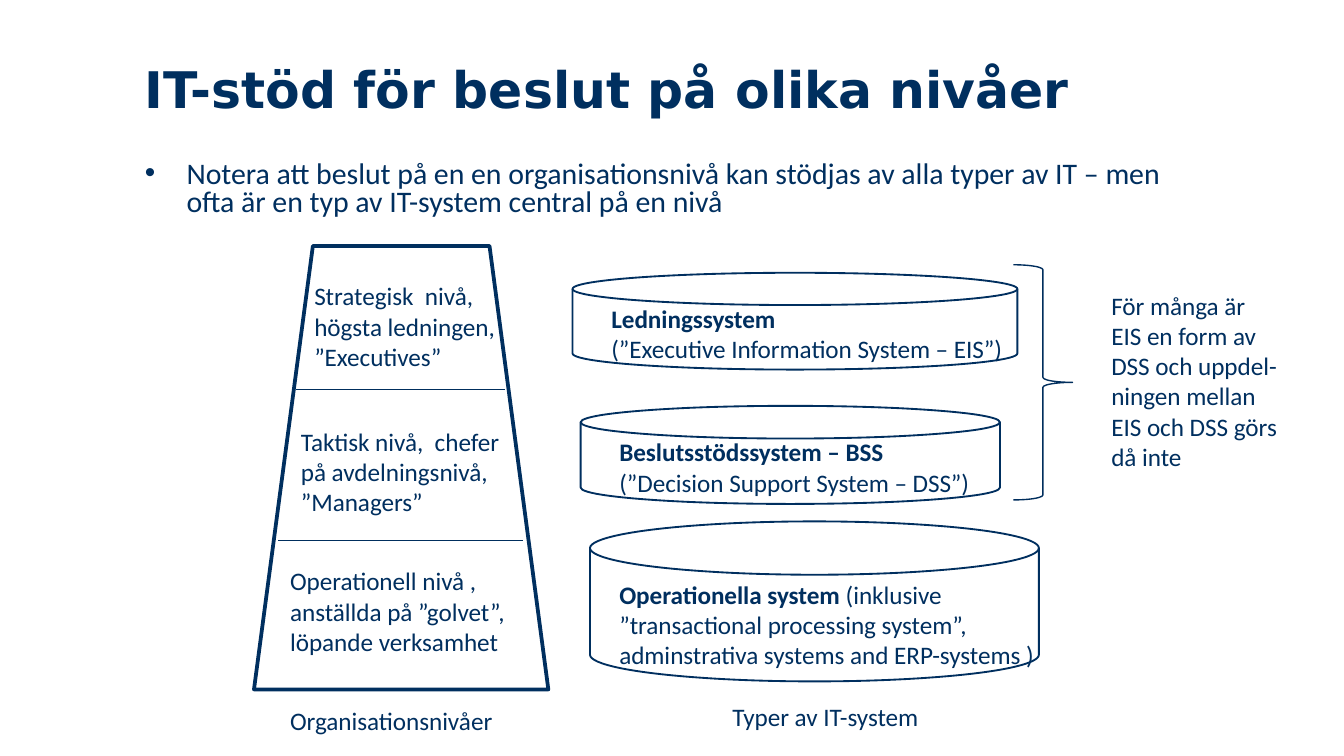
from dataclasses import dataclass, field
from typing import NamedTuple

import pptx
import pptx.dml.color
import pptx.enum.shapes
import pptx.enum.text
import pptx.oxml
import pptx.oxml.ns
import pptx.util

MSO = pptx.enum.shapes.MSO_SHAPE
Pt = pptx.util.Pt
COLS = 100


@dataclass(frozen=True)
class Theme:
    ink: str = "002F5F"
    rule: str = "002E5D"
    paper: str = "FFFFFF"
    font: str = "Calibri"
    title_font: str = "DejaVu Sans"
    title: float = 27
    body: float = 16
    label: float = 13.5
    thin: float = 0.75
    medium: float = 1
    thick: float = 2


THEME = Theme()


class Box(NamedTuple):
    col: float
    row: float
    cols: float
    rows: float


class Run(NamedTuple):
    text: str
    bold: bool = False


@dataclass(frozen=True)
class Label:
    box: Box
    paragraphs: list[list[Run]]
    size: float = THEME.label
    font: str = THEME.font
    bullet: bool = False


@dataclass(frozen=True)
class Outline:
    kind: int
    box: Box
    width: float = THEME.medium
    format: dict = field(default_factory=dict)
    filled: bool = True
    color: str = THEME.ink


class Rule(NamedTuple):
    start: float
    end: float
    row: float


def rgb(value: str) -> pptx.dml.color.RGBColor:
    return pptx.dml.color.RGBColor.from_string(value)


def apply(target, values: dict) -> None:
    for name, value in values.items():
        setattr(target, name, value)


def add_bullet(p) -> None:
    pPr = p._p.get_or_add_pPr()
    indent = pptx.util.Inches(0.31)
    pPr.set("marL", str(indent))
    pPr.set("indent", str(-indent))
    for tag in ('buFont typeface="Arial"', 'buChar char="•"'):
        pPr.append(pptx.oxml.parse_xml(f'<a:{tag} {pptx.oxml.ns.nsdecls("a")}/>'))
    p.line_spacing = 0.8


def draw_label(s, cell: float, label: Label) -> None:
    sp = s.shapes.add_textbox(*(round(v * cell) for v in label.box))
    tf = sp.text_frame
    apply(tf, {"word_wrap": True,
               "auto_size": pptx.enum.text.MSO_AUTO_SIZE.SHAPE_TO_FIT_TEXT})
    for i, runs in enumerate(label.paragraphs):
        p = tf.add_paragraph() if i else tf.paragraphs[0]
        if label.bullet:
            add_bullet(p)
        for run in runs:
            r = p.add_run()
            r.text = run.text
            apply(r.font, {"name": label.font, "size": Pt(label.size), "bold": run.bold})
            r.font.color.rgb = rgb(THEME.ink)


def draw_outline(s, cell: float, outline: Outline) -> None:
    sp = s.shapes.add_shape(outline.kind, *(round(v * cell) for v in outline.box))
    apply(sp, outline.format)
    sp.shadow.inherit = False
    if outline.filled:
        sp.fill.solid()
        sp.fill.fore_color.rgb = rgb(THEME.paper)
    else:
        sp.fill.background()
    sp.line.color.rgb = rgb(outline.color)
    sp.line.width = Pt(outline.width)


def draw_rule(s, cell: float, rule: Rule) -> None:
    ends = (rule.start, rule.row, rule.end, rule.row)
    sp = s.shapes.add_connector(pptx.enum.shapes.MSO_CONNECTOR.STRAIGHT,
                                *(round(v * cell) for v in ends))
    sp.line.color.rgb = rgb(THEME.rule)
    sp.line.width = Pt(THEME.thin)
    sp._element.spPr.append(
        pptx.oxml.parse_xml(f'<a:effectLst {pptx.oxml.ns.nsdecls("a")}/>'))


OUTLINES = [
    Outline(MSO.FLOWCHART_MANUAL_OPERATION, Box(18.9, 18.3, 21.9, 33),
            THEME.thick, {"rotation": 180}),
    Outline(MSO.FLOWCHART_MAGNETIC_DISK, Box(42.6, 20.3, 33.1, 7.2)),
    Outline(MSO.FLOWCHART_MAGNETIC_DISK, Box(43.2, 30.2, 31.2, 7.3)),
    Outline(MSO.FLOWCHART_MAGNETIC_DISK, Box(43.9, 38.8, 33.4, 11.9)),
    Outline(MSO.RIGHT_BRACE, Box(75.4, 19.7, 4.4, 17.5), THEME.thin,
            filled=False, color=THEME.rule),
]

RULES = [Rule(22, 37.6, 29), Rule(20.7, 38.9, 40.2)]

LABELS = [
    Label(Box(9.8, 3.8, 101.6, 8.8), [[Run("IT-stöd för beslut på olika nivåer", True)]],
          THEME.title, THEME.title_font),
    Label(Box(9.8, 11.5, 81.2, 5.4),
          [[Run("Notera att beslut på en en organisationsnivå kan stödjas av alla typer av IT – men "
                "ofta är en typ av IT-system central på en nivå")]],
          THEME.body, bullet=True),
    Label(Box(22.4, 20.4, 16.4, 7.8),
          [[Run("Strategisk  nivå, högsta ledningen, ”Executives”")]]),
    Label(Box(21.4, 31.2, 18.8, 7.8),
          [[Run("Taktisk nivå,  chefer på avdelningsnivå, ”Managers”")]]),
    Label(Box(20.6, 41.6, 18.8, 7.8),
          [[Run("Operationell nivå , anställda på ”golvet”, löpande verksamhet")]]),
    Label(Box(20.6, 52, 18.8, 3.3), [[Run("Organisationsnivåer")]]),
    Label(Box(44.5, 22.1, 36.2, 5.6),
          [[Run("Ledningssystem", True)], [Run("(”Executive Information System – EIS”)")]]),
    Label(Box(45.1, 32, 29.4, 5.6),
          [[Run("Beslutsstödssystem – BSS ", True), Run("(”Decision Support System – DSS”)")]]),
    Label(Box(45.1, 42.6, 33.3, 7.8),
          [[Run("Operationella system ", True),
            Run("(inklusive ”transactional processing system”, "
                "adminstrativa systems and ERP-systems )")]]),
    Label(Box(53.5, 51.7, 18.8, 3.3), [[Run("Typer av IT-system")]]),
    Label(Box(81.7, 21.1, 14.5, 14.6),
          [[Run("För många är EIS en form av DSS och uppdel-ningen mellan "
                "EIS och DSS görs då inte")]]),
]


def main() -> None:
    prs = pptx.Presentation()
    width = pptx.util.Inches(10)
    apply(prs, {"slide_width": width, "slide_height": width * 9 // 16})
    s = prs.slides.add_slide(prs.slide_layouts[6])
    cell = prs.slide_width / COLS
    for outline in OUTLINES:
        draw_outline(s, cell, outline)
    for rule in RULES:
        draw_rule(s, cell, rule)
    for label in LABELS:
        draw_label(s, cell, label)
    prs.save("out.pptx")


if __name__ == "__main__":
    main()
